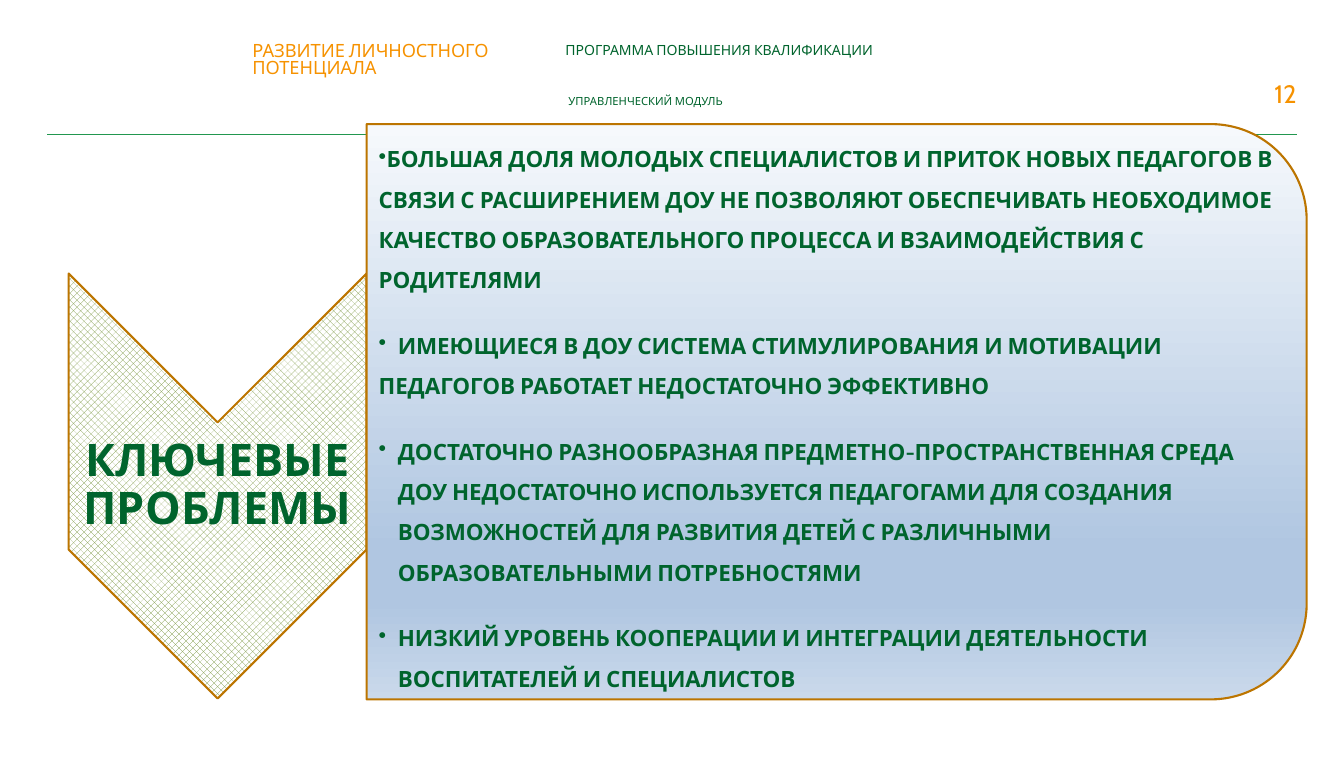
from lxml import etree
from pptx import Presentation
from pptx.dml.color import RGBColor
from pptx.enum.dml import MSO_PATTERN
from pptx.enum.shapes import MSO_CONNECTOR, MSO_SHAPE
from pptx.enum.text import MSO_ANCHOR, MSO_AUTO_SIZE, PP_ALIGN
from pptx.oxml.ns import qn
from pptx.util import Inches, Pt

STRAIGHT = MSO_CONNECTOR.STRAIGHT
CHEVRON, ROUND_TOP = MSO_SHAPE.CHEVRON, MSO_SHAPE.ROUND_2_SAME_RECTANGLE
DOTS = MSO_PATTERN.PERCENT_50
TOP, MIDDLE = MSO_ANCHOR.TOP, MSO_ANCHOR.MIDDLE
LEFT, CENTER, RIGHT = PP_ALIGN.LEFT, PP_ALIGN.CENTER, PP_ALIGN.RIGHT
NO_FIT = MSO_AUTO_SIZE.NONE

FONT = "Cabin"
GREEN, ORANGE, BROWN = "00642D", "F69200", "BC7500"
PANEL_STOPS = [(0, "F6F9FC"), (74, "B0C6E1"), (83, "B0C6E1"), (100, "CAD9EB")]
HANG = 0.19

# Text, left indent and tab stop of each problem
PROBLEMS = [
    ("БОЛЬШАЯ ДОЛЯ МОЛОДЫХ СПЕЦИАЛИСТОВ И ПРИТОК НОВЫХ ПЕДАГОГОВ В СВЯЗИ С "
     "РАСШИРЕНИЕМ ДОУ НЕ ПОЗВОЛЯЮТ ОБЕСПЕЧИВАТЬ НЕОБХОДИМОЕ КАЧЕСТВО "
     "ОБРАЗОВАТЕЛЬНОГО ПРОЦЕССА И ВЗАИМОДЕЙСТВИЯ С РОДИТЕЛЯМИ", 0, 0),
    ("\tИМЕЮЩИЕСЯ В ДОУ СИСТЕМА СТИМУЛИРОВАНИЯ И МОТИВАЦИИ ПЕДАГОГОВ "
     "РАБОТАЕТ НЕДОСТАТОЧНО ЭФФЕКТИВНО", 0, HANG),
    ("ДОСТАТОЧНО РАЗНООБРАЗНАЯ ПРЕДМЕТНО-ПРОСТРАНСТВЕННАЯ СРЕДА ДОУ "
     "НЕДОСТАТОЧНО ИСПОЛЬЗУЕТСЯ ПЕДАГОГАМИ ДЛЯ СОЗДАНИЯ ВОЗМОЖНОСТЕЙ ДЛЯ "
     "РАЗВИТИЯ ДЕТЕЙ С РАЗЛИЧНЫМИ ОБРАЗОВАТЕЛЬНЫМИ ПОТРЕБНОСТЯМИ", HANG, 0),
    ("НИЗКИЙ УРОВЕНЬ КООПЕРАЦИИ И ИНТЕГРАЦИИ ДЕЯТЕЛЬНОСТИ ВОСПИТАТЕЛЕЙ И "
     "СПЕЦИАЛИСТОВ", HANG, 0),
]


def rgb(color):
    return RGBColor.from_string(color)


def set_frame(tf, anchor=TOP, margins=(0, 0, 0, 0)):
    tf.word_wrap = True
    tf.auto_size = NO_FIT
    tf.vertical_anchor = anchor
    tf.margin_left, tf.margin_top, tf.margin_right, tf.margin_bottom = map(Inches, margins)


def style(p, size, color, bold=False, align=LEFT, spacing=1.0):
    p.alignment = align
    p.line_spacing = spacing
    for r in p.runs:
        r.font.name, r.font.size, r.font.bold = FONT, Pt(size), bold
        r.font.color.rgb = rgb(color)


def add_label(s, box, text, size, color, **options):
    tf = s.shapes.add_textbox(*map(Inches, box)).text_frame
    set_frame(tf)
    tf.text = text
    style(tf.paragraphs[0], size, color, **options)


def add_turned(s, kind, box):
    """Adds a preset turned a quarter clockwise so that it fills the box."""
    x, y, w, h = box
    sp = s.shapes.add_shape(kind, Inches(x + (w - h) / 2), Inches(y + (h - w) / 2),
                            Inches(h), Inches(w))
    sp.rotation = 90
    sp.shadow.inherit = False
    sp.line.color.rgb = rgb(BROWN)
    sp.line.width = Pt(1.5)
    return sp


def set_gradient(fill, stops):
    fill.gradient()
    fill.gradient_angle = 0
    gs_list = fill._xPr.find(qn("a:gradFill")).find(qn("a:gsLst"))
    for gs in list(gs_list):
        gs_list.remove(gs)
    for pos, color in stops:
        gs = etree.SubElement(gs_list, qn("a:gs"), pos=str(pos * 1000))
        etree.SubElement(gs, qn("a:srgbClr"), val=color)


def set_bullet(p, indent, tab):
    pPr = p._p.get_or_add_pPr()
    pPr.set("marL", str(Inches(indent)))
    pPr.set("indent", str(-Inches(indent)))
    etree.SubElement(pPr, qn("a:buChar"), char="•")
    if tab:
        tabs = etree.SubElement(pPr, qn("a:tabLst"))
        etree.SubElement(tabs, qn("a:tab"), pos=str(Inches(tab)), algn="l")


def add_header(s, box):
    x, y, w, h = box
    # Rule under the header
    rule = s.shapes.add_connector(STRAIGHT, Inches(x), Inches(y + h),
                                  Inches(x + w), Inches(y + h))
    rule.line.color.rgb = rgb("22974F")
    rule.line.width = Pt(1)
    etree.SubElement(rule._element.spPr, qn("a:effectLst"))
    # Programme names and page number
    add_label(s, (x + 2.03, y + 0.02, 3.02, 0.35), "РАЗВИТИЕ ЛИЧНОСТНОГО ПОТЕНЦИАЛА",
              13, ORANGE, spacing=0.8)
    add_label(s, (x + 5.13, y, 3.12, 0.17), "ПРОГРАММА ПОВЫШЕНИЯ КВАЛИФИКАЦИИ", 10, GREEN)
    add_label(s, (x + 5.16, y + 0.52, 2.27, 0.13), "УПРАВЛЕНЧЕСКИЙ МОДУЛЬ", 8, GREEN)
    add_label(s, (x + w - 0.82, y + 0.37, 0.82, 0.3), "12", 18, ORANGE, align=RIGHT)


def add_title_chevron(s, box):
    x, y, w, h = box
    sp = add_turned(s, CHEVRON, box)
    sp.fill.patterned()
    sp.fill.pattern = DOTS
    sp.fill.fore_color.rgb = rgb("77933C")
    sp.fill.back_color.rgb = rgb("FFFFFF")
    # Title, brought in front of the chevron
    title = s.shapes.title
    title.left, title.top = Inches(x), Inches(y + w / 2)
    title.width, title.height = Inches(w), Inches(h - w)
    s.shapes._spTree.append(title._element)
    tf = title.text_frame
    set_frame(tf, MIDDLE, (0.02, 0.02, 0.02, 0.02))
    tf.text = "КЛЮЧЕВЫЕ ПРОБЛЕМЫ"
    style(tf.paragraphs[0], 32, GREEN, bold=True, align=CENTER, spacing=0.9)


def add_problem_panel(s, box):
    x, y, w, h = box
    set_gradient(add_turned(s, ROUND_TOP, box).fill, PANEL_STOPS)
    # Bulleted problems
    inset = 0.28
    tf = s.shapes.add_textbox(Inches(x), Inches(y + inset), Inches(w - inset),
                              Inches(h - 2 * inset)).text_frame
    set_frame(tf, MIDDLE, (0.12, 0.01, 0.01, 0.01))
    for i, (text, indent, tab) in enumerate(PROBLEMS):
        p = tf.add_paragraph() if i else tf.paragraphs[0]
        p.text = text
        set_bullet(p, indent, tab)
        style(p, 16, GREEN, bold=True, spacing=1.5)
        p.space_after = Pt(18)


def main():
    prs = Presentation()
    prs.slide_width, prs.slide_height = Inches(13.31), Inches(7.5)
    s = prs.slides.add_slide(prs.slide_layouts[5])
    add_header(s, (0.47, 0.41, 12.37, 0.92))
    add_title_chevron(s, (0.68, 2.71, 2.95, 4.21))
    add_problem_panel(s, (3.63, 1.23, 9.31, 5.7))
    prs.save("out.pptx")


if __name__ == "__main__":
    main()
